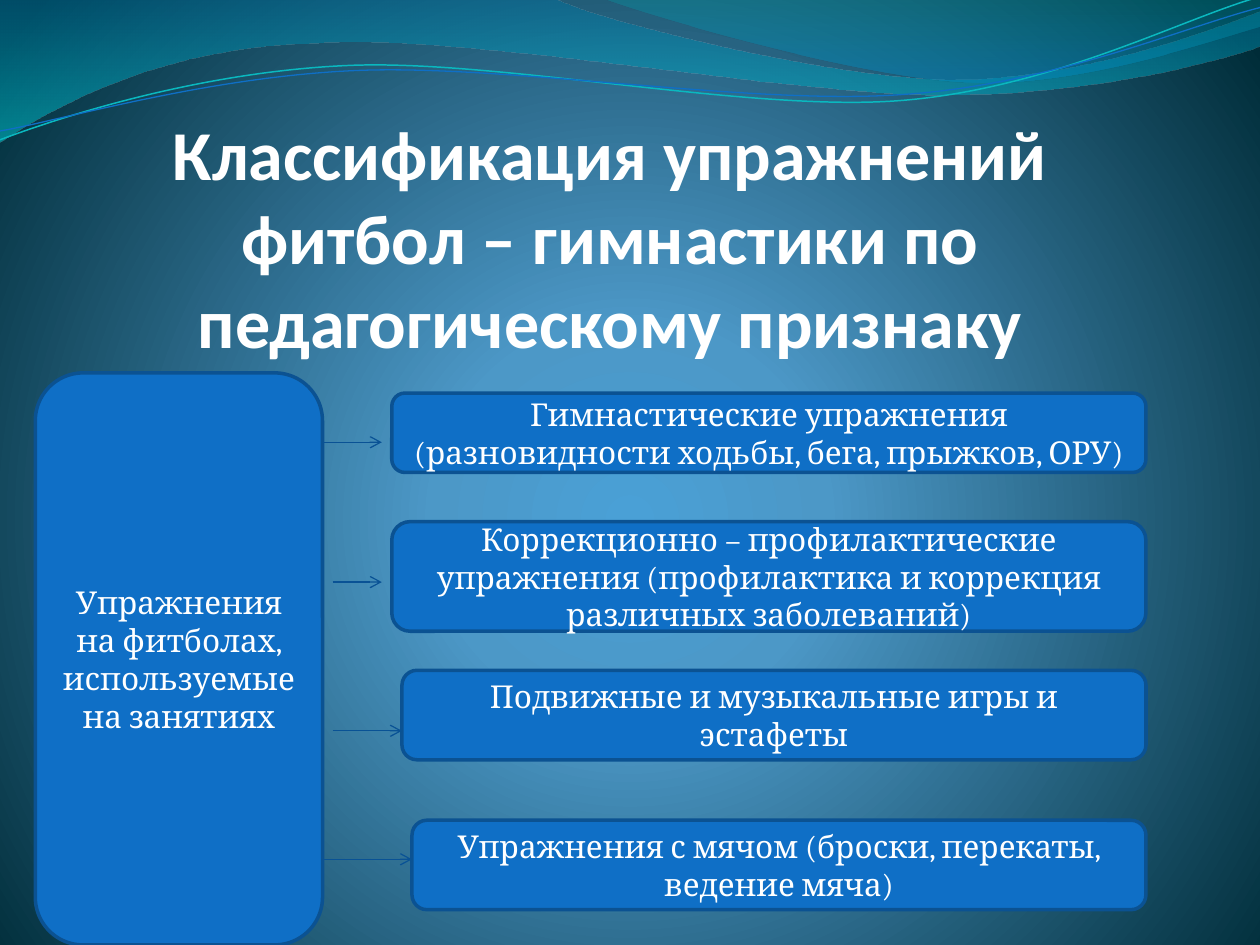
import pptx
import pptx.util
import pptx.dml.color
import pptx.enum.shapes
import pptx.enum.text
import pptx.oxml
import pptx.oxml.ns

COLS, ROWS = 100, 75
WIDE, HIGH = pptx.util.Inches(10), pptx.util.Inches(7.5)
RIGHT = 90.95
HUES = {
    "box": "0F6FC6", "edge": "0B5292", "arrow": "095295", "text": "FFFFFF",
    "teal": "0AB8BF", "blue": "0F6FC6",
}
GLOW = [(0, "4AA0D6", 100), (25, "4C98C7", 100), (100, "002C38", 100)]
RADIAL = '<a:path path="circle"><a:fillToRect l="10000" t="110000" r="10000" b="100000"/></a:path>'
DOWN = '<a:lin ang="5400000" scaled="1"/>'

BANDS = [
    ([(0, 0), (44, -.1),
      (47.6, 1.7, 66.4, 6.3, 75.8, 6.3), (85.3, 6.3, 95.8, 2.6, 100, .9),
      (100.1, 3.6),
      (98.3, 4.4, 87, 7.6, 74.6, 7.5), (62.2, 7.5, 38.2, 2.8, 25.7, 3.4),
      (12.9, 3.6, 4.6, 8.3, -.1, 11.3)],
     [(0, "0074A1", 45), (100, "00C6CF", 55)]),
    ([(47.9, -.1),
      (50.9, 1.1, 68.2, 6.2, 76.9, 6.5), (85.6, 6.9, 96.1, 3.2, 100, 2.1),
      (100, 0)],
     [(0, "00A1A9", 30), (80, "008BBF", 45)]),
]
WAVES = [
    ([(0, 11.1),
      (4.8, 9.3, 15.8, 5.7, 27.7, 5.2), (39.5, 4.7, 59.3, 8.9, 71.3, 8),
      (83.3, 7.1, 93.8, 1.5, 99.8, -.2)], "teal", .85),
    ([(0, 10.4),
      (4.7, 9.6, 16.4, 6.1, 28.3, 5.6), (40.3, 5.1, 59.7, 8.4, 71.7, 7.5),
      (83.6, 6.7, 94.1, 2.1, 100, .6)], "blue", .75),
]
ITEMS = [
    (31.1, 31.2, 6.3, "Гимнастические упражнения (разновидности ходьбы, бега, прыжков, ОРУ)"),
    (31.1, 41.4, 8.7, "Коррекционно – профилактические упражнения (профилактика и коррекция различных заболеваний)"),
    (31.9, 53.2, 7.1, "Подвижные и музыкальные игры и эстафеты"),
    (32.7, 65.1, 7.1, "Упражнения с мячом (броски, перекаты, ведение мяча)"),
]
ARROWS = [(25.6, 30.3, 35.1), (26.4, 30.3, 46.2), (26.4, 31.9, 58), (25.6, 32.7, 68.2)]


def across(col):
    return round(WIDE * col / COLS)


def down(row):
    return round(HIGH * row / ROWS)


def place(x, y, w, h):
    return across(x), down(y), across(w), down(h)


def hue(name):
    return pptx.dml.color.RGBColor.from_string(HUES[name])


def stroke(line, name, size):
    line.color.rgb = hue(name)
    line.width = pptx.util.Pt(size)


def blend(fill, root, stops, aim):
    fill.gradient()
    marks = "".join(
        f'<a:gs pos="{pos * 1000}"><a:srgbClr val="{tint}">'
        f'<a:alpha val="{alpha * 1000}"/></a:srgbClr></a:gs>'
        for pos, tint, alpha in stops)
    space = pptx.oxml.ns.nsdecls("a")
    grad = pptx.oxml.parse_xml(
        f'<a:gradFill {space} rotWithShape="1"><a:gsLst>{marks}</a:gsLst>{aim}</a:gradFill>')
    old = root.find(".//" + pptx.oxml.ns.qn("a:gradFill"))
    old.getparent().replace(old, grad)


def bend(curve, steps):
    space = pptx.oxml.ns.nsdecls("a")
    legs = iter(curve.element.findall(".//" + pptx.oxml.ns.qn("a:lnTo")))
    for step in steps[1:]:
        group = [next(legs) for _ in range(len(step) // 2)]
        if len(group) == 1:
            continue
        arc = pptx.oxml.parse_xml(f"<a:cubicBezTo {space}/>")
        group[0].addprevious(arc)
        for leg in group:
            arc.append(leg[0])
            leg.getparent().remove(leg)


def add_curve(slide, steps, close):
    dots = [(across(step[i]), down(step[i + 1]))
            for step in steps for i in range(0, len(step), 2)]
    pen = slide.shapes.build_freeform(*dots[0])
    pen.add_line_segments(dots[1:], close=close)
    curve = pen.convert_to_shape()
    curve.shadow.inherit = False
    bend(curve, steps)
    return curve


def add_band(slide, steps, stops):
    band = add_curve(slide, steps, True)
    band.line.fill.background()
    blend(band.fill, band.element, stops, DOWN)


def add_wave(slide, steps, name, size):
    wave = add_curve(slide, steps, False)
    wave.fill.background()
    stroke(wave.line, name, size)


def write(shape, text, face, size, anchor, bold=False):
    frame = shape.text_frame
    frame.word_wrap = True
    frame.vertical_anchor = anchor
    para = frame.paragraphs[0]
    para.text = text
    para.alignment = pptx.enum.text.PP_ALIGN.CENTER
    para.font.name = face
    para.font.size = pptx.util.Pt(size)
    para.font.bold = bold
    para.font.color.rgb = hue("text")


def add_title(slide, text):
    title = slide.shapes.add_textbox(*place(5.9, 13.9, 85, 14.9))
    frame = title.text_frame
    frame.margin_left = frame.margin_right = frame.margin_top = frame.margin_bottom = 0
    write(title, text, "Calibri", 40, pptx.enum.text.MSO_ANCHOR.BOTTOM, True)


def add_box(slide, x, y, w, h, text):
    kind = pptx.enum.shapes.MSO_SHAPE.ROUNDED_RECTANGLE
    box = slide.shapes.add_shape(kind, *place(x, y, w, h))
    box.shadow.inherit = False
    box.fill.solid()
    box.fill.fore_color.rgb = hue("box")
    stroke(box.line, "edge", 2)
    write(box, text, "Cambria", 18, pptx.enum.text.MSO_ANCHOR.MIDDLE)


def add_arrow(slide, start, end, row):
    kind = pptx.enum.shapes.MSO_CONNECTOR.STRAIGHT
    arrow = slide.shapes.add_connector(
        kind, across(start), down(row), across(end), down(row))
    stroke(arrow.line, "arrow", .75)
    space = pptx.oxml.ns.nsdecls("a")
    arrow.line._get_or_add_ln().append(
        pptx.oxml.parse_xml(f'<a:tailEnd {space} type="arrow"/>'))
    arrow.element.spPr.append(pptx.oxml.parse_xml(f"<a:effectLst {space}/>"))


def main():
    deck = pptx.Presentation()
    deck.slide_width, deck.slide_height = WIDE, HIGH
    slide = deck.slides.add_slide(deck.slide_layouts[6])
    blend(slide.background.fill, slide.element, GLOW, RADIAL)
    for band in BANDS:
        add_band(slide, *band)
    for wave in WAVES:
        add_wave(slide, *wave)
    add_title(slide, "Классификация упражнений фитбол – гимнастики по педагогическому признаку")
    add_box(slide, 2.8, 29.6, 22.8, 45.4, "Упражнения на фитболах, используемые на занятиях")
    for x, y, h, text in ITEMS:
        add_box(slide, x, y, RIGHT - x, h, text)
    for arrow in ARROWS:
        add_arrow(slide, *arrow)
    deck.save("out.pptx")


if __name__ == "__main__":
    main()
